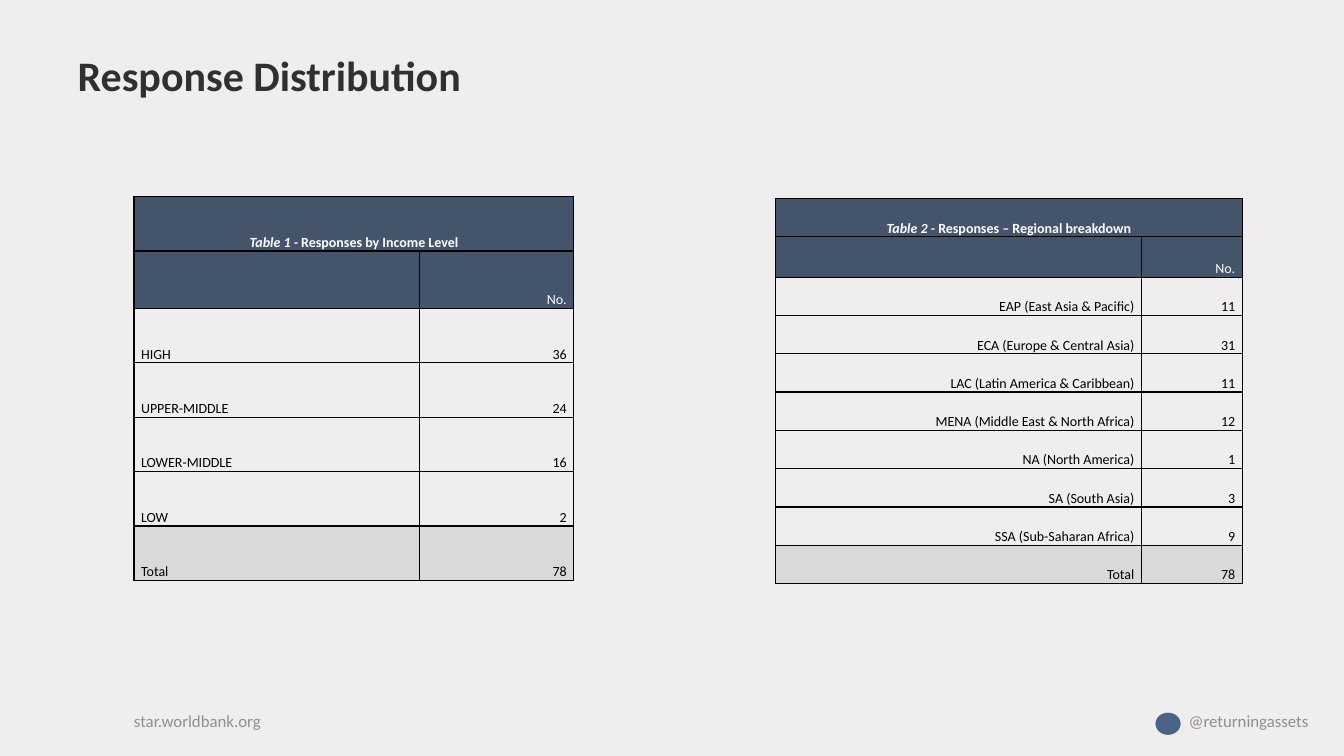
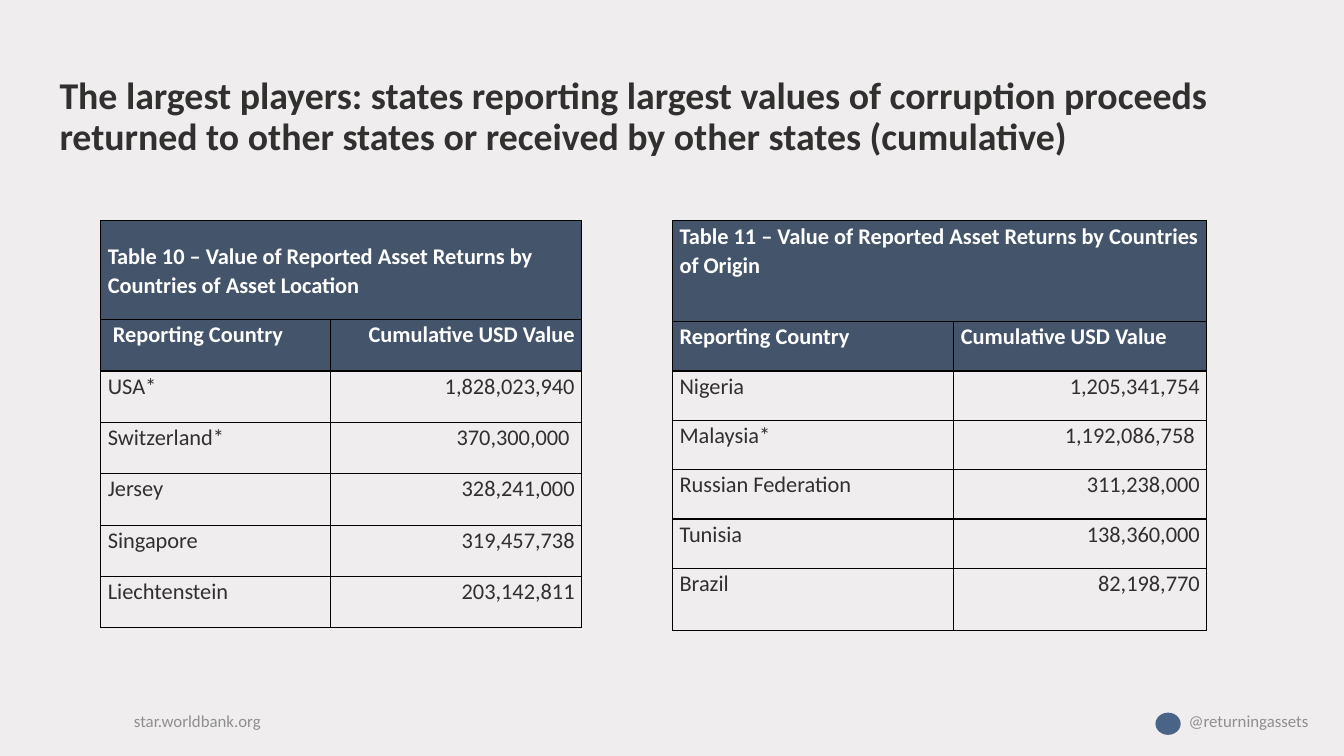
from dataclasses import dataclass

from lxml.etree import SubElement
from pptx import Presentation
from pptx.dml.color import RGBColor
from pptx.enum.shapes import MSO_SHAPE
from pptx.enum.text import MSO_ANCHOR, MSO_AUTO_SIZE, PP_ALIGN
from pptx.oxml.ns import qn
from pptx.util import Inches, Pt

LEFT, CENTER, RIGHT = PP_ALIGN.LEFT, PP_ALIGN.CENTER, PP_ALIGN.RIGHT
TOP, MIDDLE, BOTTOM = MSO_ANCHOR.TOP, MSO_ANCHOR.MIDDLE, MSO_ANCHOR.BOTTOM


@dataclass(frozen=True)
class Theme:
    font: str = "Calibri"
    paper: str = "EFEDED"
    ink: str = "30302F"
    black: str = "000000"
    white: str = "FFFFFF"
    band: str = "44546A"
    total: str = "D9D9D9"
    muted: str = "8F8F8F"
    accent: str = "4A6488"
    title_size: int = 30
    long_title_size: int = 27
    small_table_size: int = 10
    table_size: int = 16
    footer_size: int = 12
    border_width: float = 1
    cell_inset: float = 0.07


THEME = Theme()


@dataclass(frozen=True)
class TableStyle:
    size: int
    ink: str
    anchor: MSO_ANCHOR
    caption_align: PP_ALIGN
    header_bold: bool
    has_total: bool


SMALL = TableStyle(THEME.small_table_size, THEME.black, BOTTOM, CENTER, False, True)
LARGE = TableStyle(THEME.table_size, THEME.ink, TOP, LEFT, True, False)


def color(value):
    return RGBColor.from_string(value)


def write(frame, spans, size, ink, align=LEFT, spacing=1.0, bold=False):
    """Fill a text frame with one paragraph of (text, italic) spans."""
    para = frame.paragraphs[0]
    para.alignment, para.line_spacing = align, spacing
    for text, italic in spans:
        span = para.add_run()
        span.text = text
        formats = {"name": THEME.font, "size": Pt(size), "bold": bold, "italic": italic}
        for name, value in formats.items():
            setattr(span.font, name, value)
        span.font.color.rgb = color(ink)


def place(shape, box):
    for name, value in zip(("left", "top", "width", "height"), box):
        setattr(shape, name, Inches(value))


def add_title(page, text, box, size):
    title = page.shapes.title
    place(title, box)
    frame = title.text_frame
    formats = {"word_wrap": True, "auto_size": MSO_AUTO_SIZE.NONE, "vertical_anchor": MIDDLE}
    for name, value in formats.items():
        setattr(frame, name, value)
    write(frame, [(text, False)], size, THEME.ink, spacing=0.9, bold=True)


def add_footer(page):
    """Web address at the left, account mark and handle at the right."""
    for text, left, width in (("star.worldbank.org", 1.23, 2.15),
                              ("@returningassets", 11.69, 1.61)):
        box = page.shapes.add_textbox(*map(Inches, (left, 6.95, width, 0.4)))
        box.text_frame.word_wrap = True
        box.text_frame.vertical_anchor = MIDDLE
        write(box.text_frame, [(text, False)], THEME.footer_size, THEME.muted)
    mark = page.shapes.add_shape(MSO_SHAPE.OVAL, *map(Inches, (11.46, 7.07, 0.25, 0.22)))
    mark.shadow.inherit = False
    mark.fill.solid()
    mark.fill.fore_color.rgb = color(THEME.accent)
    mark.line.fill.background()


def format_cell(cell, anchor, fill=None):
    cell.vertical_anchor = anchor
    inset = Inches(THEME.cell_inset)
    margins = {"margin_left": inset, "margin_right": inset, "margin_top": 0, "margin_bottom": 0}
    for name, value in margins.items():
        setattr(cell, name, value)
    # Borders come before the fill in the cell properties
    properties = cell._tc.get_or_add_tcPr()
    for side in ("a:lnL", "a:lnR", "a:lnT", "a:lnB"):
        line = SubElement(properties, qn(side), w=str(Pt(THEME.border_width)))
        SubElement(SubElement(line, qn("a:solidFill")), qn("a:srgbClr"), val=THEME.black)
    if fill:
        cell.fill.solid()
        cell.fill.fore_color.rgb = color(fill)
    else:
        cell.fill.background()


def add_data_table(page, origin, columns, heights, caption, header, body, style,
                   label_align=LEFT, header_align=RIGHT, caption_anchor=None):
    """Caption row across both columns, header row, then label and value rows."""
    rows = [("", ""), header, *body]
    box = (*origin, sum(columns), sum(heights))
    table = page.shapes.add_table(len(rows), len(columns), *map(Inches, box)).table
    table.first_row = table.horz_banding = False
    for column, width in zip(table.columns, columns):
        column.width = Inches(width)
    for row, height in zip(table.rows, heights):
        row.height = Inches(height)

    for r, texts in enumerate(rows):
        is_head = r < 2
        is_total = style.has_total and r == len(rows) - 1
        fill = THEME.band if is_head else THEME.total if is_total else None
        ink = THEME.white if is_head else style.ink
        aligns = (label_align, header_align if is_head else RIGHT)
        for c, text in enumerate(texts):
            cell = table.cell(r, c)
            format_cell(cell, style.anchor, fill)
            if text:
                write(cell.text_frame, [(text, False)], style.size, ink, aligns[c], 1.07,
                      is_head and style.header_bold)

    top = table.cell(0, 0)
    top.merge(table.cell(0, 1))
    top.vertical_anchor = caption_anchor or style.anchor
    write(top.text_frame, caption, style.size, THEME.white, style.caption_align, 1.07, True)


def add_page(deck, title, box, size):
    page = deck.slides.add_slide(deck.slide_layouts[5])
    add_footer(page)
    add_title(page, title, box, size)
    return page


def build_distribution(deck):
    page = add_page(deck, "Response Distribution", (0.67, 0.49, 11.5, 0.57), THEME.title_size)
    income = [("HIGH", "36"), ("UPPER-MIDDLE", "24"), ("LOWER-MIDDLE", "16"),
              ("LOW", "2"), ("Total", "78")]
    regions = [("EAP (East Asia & Pacific)", "11"), ("ECA (Europe & Central Asia)", "31"),
               ("LAC (Latin America & Caribbean)", "11"),
               ("MENA (Middle East & North Africa)", "12"), ("NA (North America)", "1"),
               ("SA (South Asia)", "3"), ("SSA (Sub-Saharan Africa)", "9"), ("Total", "78")]
    add_data_table(page, (1.33, 1.95), (2.83, 1.53), [0.54, 0.57] + [0.54] * len(income),
                   [("Table 1 - ", True), ("Responses by Income Level", False)],
                   ("", "No."), income, SMALL)
    add_data_table(page, (7.69, 1.97), (3.63, 1), [0.38, 0.4] + [0.38] * len(regions),
                   [("Table 2 - ", True), ("Responses – Regional breakdown", False)],
                   ("", "No."), regions, SMALL, label_align=RIGHT)


def build_largest_players(deck):
    page = add_page(deck, "The largest players: states reporting largest values of corruption "
                    "proceeds returned to other states or received by other states (cumulative)",
                    (0.49, 0.66, 12.35, 1.02), THEME.long_title_size)
    locations = [("USA*", "1,828,023,940"), ("Switzerland*", "370,300,000 "),
                 ("Jersey", "328,241,000"), ("Singapore", "319,457,738"),
                 ("Liechtenstein", "203,142,811")]
    origins = [("Nigeria", "1,205,341,754"), ("Malaysia*", "1,192,086,758 "),
               ("Russian Federation", "311,238,000"), ("Tunisia", "138,360,000"),
               ("Brazil", "82,198,770")]
    add_data_table(page, (1, 2.19), (2.28, 2.49), [0.98] + [0.51] * 6,
                   [("Table 10 – Value of Reported Asset Returns by Countries of Asset Location",
                     False)],
                   (" Reporting Country", "Cumulative USD Value"), locations, LARGE,
                   caption_anchor=MIDDLE)
    add_data_table(page, (6.67, 2.19), (2.79, 2.51), [1] + [0.49] * 5 + [0.62],
                   [("Table 11 – Value of Reported Asset Returns by Countries of Origin", False)],
                   ("Reporting Country", "Cumulative USD Value"), origins, LARGE,
                   header_align=LEFT)


def main():
    deck = Presentation()
    deck.slide_width, deck.slide_height = Inches(13.33), Inches(7.5)
    background = deck.slide_master.background.fill
    background.solid()
    background.fore_color.rgb = color(THEME.paper)
    build_distribution(deck)
    build_largest_players(deck)
    deck.save("out.pptx")


if __name__ == "__main__":
    main()
